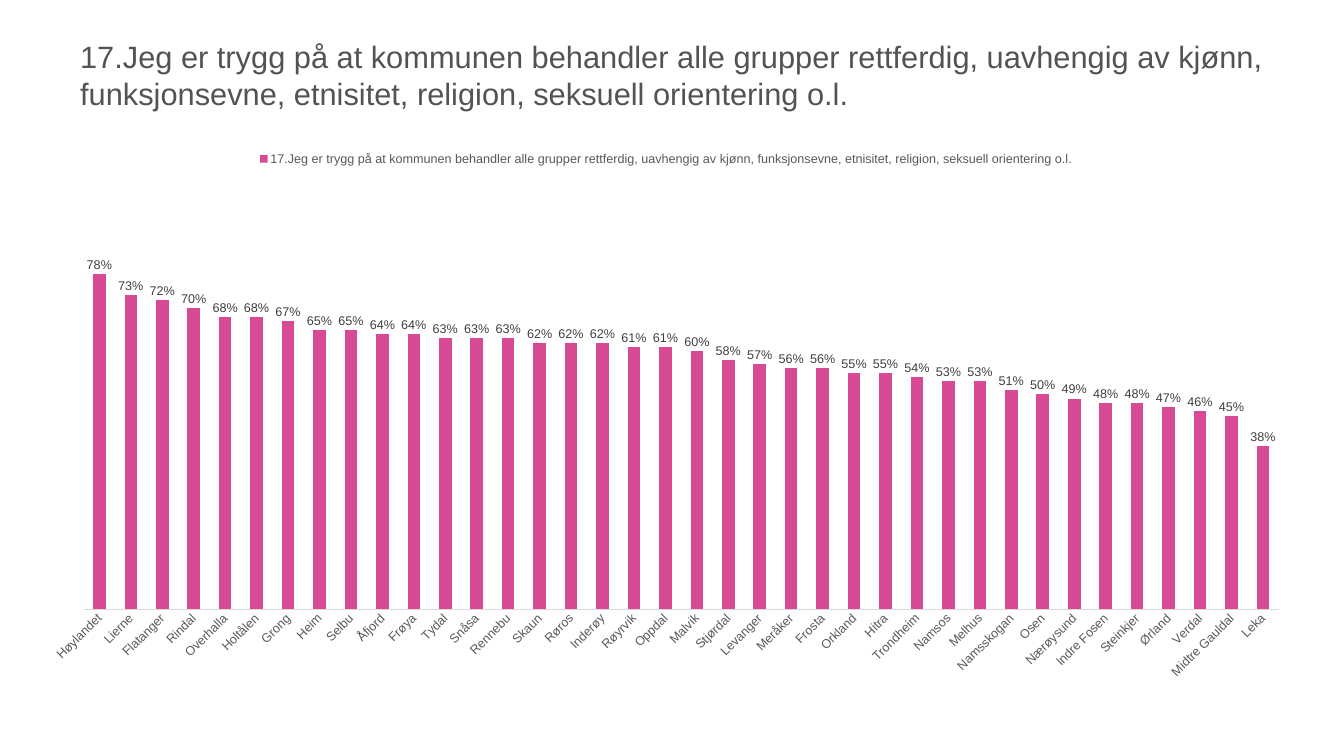
"""Build a slide ranking municipalities by trust in fair treatment."""
from pptx import Presentation
from pptx import util as u
from pptx.chart.data import CategoryChartData
from pptx.dml.color import RGBColor
from pptx.enum import chart as c
from pptx.enum import text

PX = 9144
FONT = "Arial"
WHITE = RGBColor(0xFF, 0xFF, 0xFF)
TITLE_GREY = RGBColor(0x53, 0x53, 0x53)
AXIS_GREY = RGBColor(0x59, 0x59, 0x59)
LABEL_GREY = RGBColor(0x40, 0x40, 0x40)
LINE_GREY = RGBColor(0xD9, 0xD9, 0xD9)
PINK = RGBColor(0xD9, 0x4A, 0x94)

STATEMENT = (
    "17.Jeg er trygg på at kommunen behandler alle grupper rettferdig, "
    "uavhengig av kjønn, funksjonsevne, etnisitet, religion, "
    "seksuell orientering o.l."
)
SHARES = {
    "Høylandet": 0.78, "Lierne": 0.73, "Flatanger": 0.72, "Rindal": 0.7,
    "Overhalla": 0.68, "Holtålen": 0.68, "Grong": 0.67, "Heim": 0.65,
    "Selbu": 0.65, "Åfjord": 0.64, "Frøya": 0.64, "Tydal": 0.63,
    "Snåsa": 0.63, "Rennebu": 0.63, "Skaun": 0.62, "Røros": 0.62,
    "Inderøy": 0.62, "Røyrvik": 0.61, "Oppdal": 0.61, "Malvik": 0.6,
    "Stjørdal": 0.58, "Levanger": 0.57, "Meråker": 0.56, "Frosta": 0.56,
    "Orkland": 0.55, "Hitra": 0.55, "Trondheim": 0.54, "Namsos": 0.53,
    "Melhus": 0.53, "Namsskogan": 0.51, "Osen": 0.5, "Nærøysund": 0.49,
    "Indre Fosen": 0.48, "Steinkjer": 0.48, "Ørland": 0.47, "Verdal": 0.46,
    "Midtre Gauldal": 0.45, "Leka": 0.38,
}


class SlideBuilder:
    def __init__(self, slide, font_name):
        self.slide = slide
        self.font_name = font_name

    def style(self, font, size, color):
        font.name = self.font_name
        font.size = u.Pt(size)
        font.bold = False
        font.color.rgb = color

    def background(self, color):
        fill = self.slide.background.fill
        fill.solid()
        fill.fore_color.rgb = color

    def title(self, words, box, size, color):
        shape = self.slide.shapes.add_textbox(*(n * PX for n in box))
        frame = shape.text_frame
        frame.word_wrap = True
        frame.vertical_anchor = text.MSO_ANCHOR.MIDDLE
        frame.margin_left = frame.margin_right = 6 * PX
        frame.margin_top = frame.margin_bottom = 6 * PX
        frame.text = words
        self.style(frame.paragraphs[0].runs[0].font, size, color)

    def column_chart(self, name, values, box, size):
        data = CategoryChartData(number_format="0%")
        data.categories = list(values)
        data.add_series(name, list(values.values()))
        chart = self.slide.shapes.add_chart(
            c.XL_CHART_TYPE.COLUMN_CLUSTERED, *(n * PX for n in box), data
        ).chart
        self.style(chart.font, size, AXIS_GREY)
        chart.has_title = False
        chart.has_legend = True
        chart.legend.position = c.XL_LEGEND_POSITION.TOP
        chart.legend.include_in_layout = False
        self.style(chart.legend.font, size, AXIS_GREY)

        value_axis = chart.value_axis
        value_axis.minimum_scale, value_axis.maximum_scale = 0, 1
        value_axis.has_major_gridlines = False
        value_axis.visible = False
        category_axis = chart.category_axis
        category_axis.major_tick_mark = c.XL_TICK_MARK.NONE
        category_axis.format.line.color.rgb = LINE_GREY
        category_axis.format.line.width = u.Pt(0.75)
        self.style(category_axis.tick_labels.font, size, AXIS_GREY)

        plot = chart.plots[0]
        plot.gap_width = 150
        plot.overlap = -25
        plot.vary_by_categories = False
        fill = plot.series[0].format.fill
        fill.solid()
        fill.fore_color.rgb = PINK
        plot.has_data_labels = True
        labels = plot.data_labels
        labels.show_value = True
        labels.number_format = "0%"
        labels.number_format_is_linked = False
        labels.position = c.XL_LABEL_POSITION.OUTSIDE_END
        self.style(labels.font, size, LABEL_GREY)


def main():
    presentation = Presentation()
    presentation.slide_width = 2667 * PX
    presentation.slide_height = 1500 * PX
    slide = presentation.slides.add_slide(presentation.slide_layouts[6])
    builder = SlideBuilder(slide, FONT)
    builder.background(WHITE)
    builder.title(STATEMENT, (153, 47, 2458, 204), 44, TITLE_GREY)
    builder.column_chart(STATEMENT, SHARES, (56, 289, 2532, 1080), 18)
    presentation.save("out.pptx")


if __name__ == "__main__":
    main()
